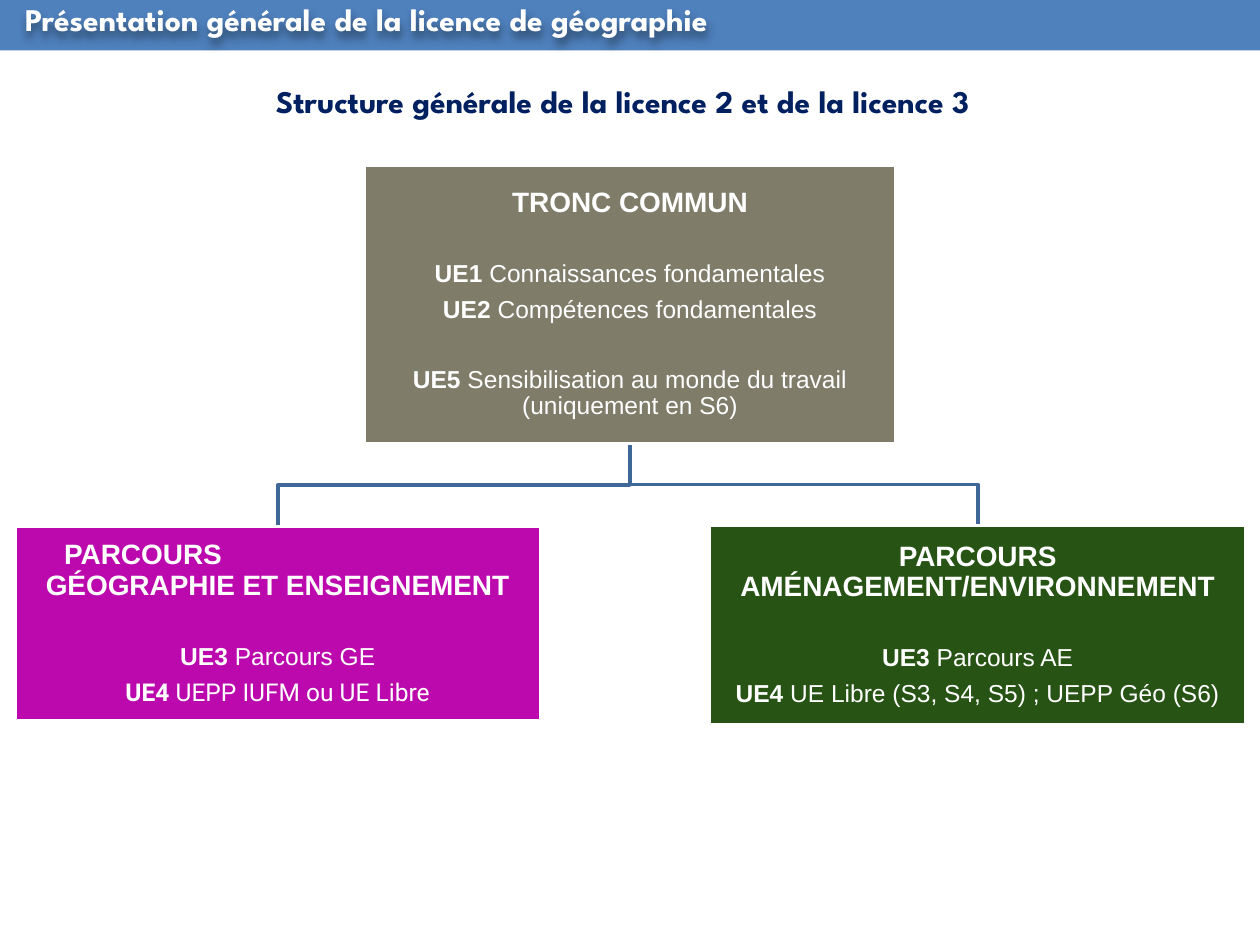
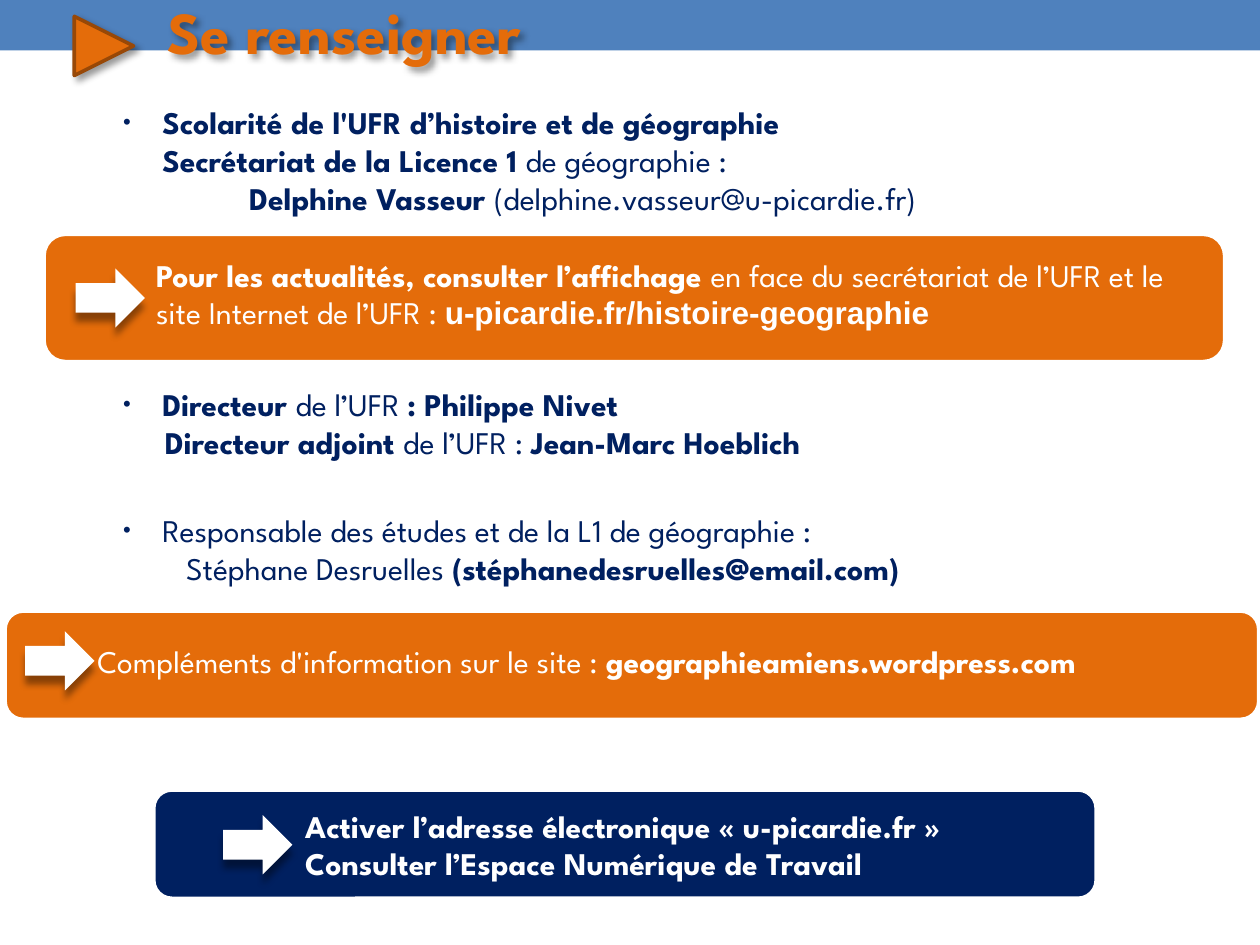
from lxml.etree import SubElement as Sub
from pptx import Presentation
from pptx.dml.color import RGBColor as Rgb
from pptx.enum.shapes import MSO_SHAPE as Kind
from pptx.enum.text import MSO_ANCHOR as Anchor, MSO_AUTO_SIZE as Auto, PP_ALIGN as Align
from pptx.oxml.ns import qn
from pptx.util import Inches, Pt

HUE = {
    "band": "4F81BD", "navy": "002060", "white": "FFFFFF", "orange": "E46C0A",
    "rust": "984807", "wire": "3F6797", "olive": "4A452A", "pink": "BB09AE",
    "green": "275315", "black": "000000",
}
HEAD = "League Spartan"
COLS, ROWS = 100, 75
WIDE, HIGH = Inches(10), Inches(7.5)
EDGE = 2.08
NAVY = {"name": HEAD, "size": Pt(18), "hue": "navy"}
PALE = {**NAVY, "hue": "white"}
CARD = {"name": "Arial", "size": Pt(14), "hue": "white"}
TOP = {"size": Pt(16)}
BULLET = {"left": 0.31, "hang": -0.31, "bullet": True}


def apply(item, looks):
    """Set each attribute of an item from a dict."""
    for key, value in looks.items():
        setattr(item, key, value)


def grid(col, row, cols, rows):
    """Turn grid columns and rows into slide lengths."""
    return (int(col * WIDE / COLS), int(row * HIGH / ROWS),
            int(cols * WIDE / COLS), int(rows * HIGH / ROWS))


def within(box, col, row, cols, rows):
    """Shift a part by the corner of its box."""
    return box[0] + col, box[1] + row, cols, rows


def paint(shape, fill=None, line=None):
    """Give a shape its flat fill and line."""
    shape.shadow.inherit = False
    if fill:
        shape.fill.solid()
        shape.fill.fore_color.rgb = Rgb.from_string(HUE[fill])
    else:
        shape.fill.background()
    if line:
        shape.line.color.rgb = Rgb.from_string(HUE[line])
        shape.line.width = Pt(EDGE)
    else:
        shape.line.fill.background()


def draw(slide, kind, box, fill, line=None):
    """Add a painted preset shape."""
    shape = slide.shapes.add_shape(kind, *grid(*box))
    paint(shape, fill, line)
    return shape


def shade(shape, far, turn):
    """Cast a soft shadow."""
    shape.shadow.inherit = False
    list_ = shape.element.spPr.find(qn("a:effectLst"))
    cast = Sub(list_, qn("a:outerShdw"), blurRad=str(Pt(4)), dist=str(Pt(far)),
               dir=str(turn * 60000), rotWithShape="0")
    tint = Sub(cast, qn("a:srgbClr"), val=HUE["black"])
    Sub(tint, qn("a:alpha"), val="40000")


def indent(para, left=0, hang=0, bullet=False):
    """Set the margin and bullet of a paragraph."""
    props = para._p.get_or_add_pPr()
    props.set("marL", str(Inches(left)))
    props.set("indent", str(Inches(hang)))
    if bullet:
        Sub(props, qn("a:buSzPct"), val="70000")
        Sub(props, qn("a:buFont"), typeface="Arial")
        Sub(props, qn("a:buChar"), char="•")


def write(frame, lines, look, shape=None):
    """Fill a frame with lines whose parts are bold and plain in turn."""
    for num, (parts, own) in enumerate(lines):
        para = frame.add_paragraph() if num else frame.paragraphs[0]
        own = {**look, **own}
        indent(para, **own.get("indent", {}))
        apply(para, {**(shape or {}), **own.get("para", {})})
        for spot, text in enumerate(parts):
            if not text:
                continue
            run = para.add_run()
            run.text = text
            name = own.get("fonts", {}).get(spot, own["name"])
            apply(run.font, {"name": name, "size": own["size"], "bold": spot % 2 == 0})
            run.font.color.rgb = Rgb.from_string(HUE[own["hue"]])


def note(slide, box, lines, look, wrap=True):
    """Add a plain text box."""
    frame = slide.shapes.add_textbox(*grid(*box)).text_frame
    frame.word_wrap = wrap
    write(frame, lines, look)


def title(slide, box, text, look, left, turn):
    """Place and format the title placeholder."""
    head = slide.shapes.title
    apply(head, dict(zip(("left", "top", "width", "height"), grid(*box))))
    apply(head.text_frame, {"vertical_anchor": Anchor.MIDDLE, "word_wrap": True,
                            "auto_size": Auto.NONE})
    write(head.text_frame, [((text,), {"indent": {"left": left}})], look,
          {"alignment": Align.LEFT})
    shade(head, 3, turn)


def band(slide):
    """Draw the top band once, on the shared layout."""
    bar = draw(slide, Kind.RECTANGLE, (0, 0, COLS, 4), "band")
    bar.element.nvSpPr.cNvPr.set("id", "99")
    slide.slide_layout.shapes.element.insert(2, bar.element)


def card(slide, box, fill, lines):
    """Add a filled block of course units."""
    block = draw(slide, Kind.RECTANGLE, box, fill, "white")
    frame = block.text_frame
    pads = ("margin_left", "margin_right", "margin_top", "margin_bottom")
    apply(frame, {**dict.fromkeys(pads, Inches(0.01)), "word_wrap": True,
                  "vertical_anchor": Anchor.MIDDLE})
    write(frame, lines, CARD, {"alignment": Align.CENTER, "line_spacing": 0.9})
    return block


def branch(slide, trunk, leaf):
    """Link the foot of one box to the head of another."""
    x, y = trunk[0] + trunk[2] / 2, trunk[1] + trunk[3]
    end, low = leaf[0] + leaf[2] / 2, leaf[1]
    mid = (y + low) / 2
    spots = [grid(*spot, 0, 0)[:2] for spot in ((x, y), (x, mid), (end, mid), (end, low))]
    path_ = slide.shapes.build_freeform(*spots[0], scale=1.0)
    path_.add_line_segments(spots[1:], close=False)
    paint(path_.convert_to_shape(), line="wire")


def tree(slide, box):
    """Lay out the common core and its two branches."""
    core = within(box, 27.7, 0, 42.2, 22.1)
    teach = within(box, 0, 28.7, 41.7, 15.4)
    plan = within(box, 55.1, 28.6, 42.6, 15.8)
    for leaf in (plan, teach):
        branch(slide, core, leaf)
    near, far = ({"para": {"space_before": Pt(gap)}} for gap in (5.5, 24.5))
    block = card(slide, core, "olive", [
        (("TRONC COMMUN",), TOP),
        (("UE1", " Connaissances fondamentales"), far),
        (("UE2", " Compétences fondamentales"), near),
        (("UE5", " Sensibilisation au monde du travail (uniquement en S6)"), far),
    ])
    tint = block.element.spPr.find(qn("a:solidFill"))[0]
    Sub(tint, qn("a:alpha"), val="70000")
    card(slide, teach, "pink", [
        (("PARCOURS",), {**TOP, "indent": {"left": 0.38}, "para": {"alignment": Align.LEFT}}),
        (("GÉOGRAPHIE ET ENSEIGNEMENT",), TOP),
        (("UE3 ", "Parcours GE"), far),
        (("UE4 ", "UEPP IUFM ou UE Libre"), {**near, "name": "Roboto"}),
    ])
    card(slide, plan, "green", [
        (("PARCOURS AMÉNAGEMENT/ENVIRONNEMENT",), TOP),
        (("UE3 ", "Parcours AE"), far),
        (("UE4 ", "UE Libre (S3, S4, S5) ; UEPP Géo (S6)"), near),
    ])


def banner(slide, box, fill, pad, arrow, lines):
    """Add a rounded banner with its arrow."""
    block = draw(slide, Kind.ROUNDED_RECTANGLE, box, fill, "white")
    left, top = pad
    apply(block.text_frame, {
        "margin_left": Inches(left), "margin_top": Inches(top), "margin_right": Inches(0.11),
        "word_wrap": True, "vertical_anchor": Anchor.TOP,
    })
    write(block.text_frame, lines, PALE, {"alignment": Align.LEFT})
    mark = draw(slide, Kind.RIGHT_ARROW, within(box, *arrow, 5.5, 4.7), "white")
    shade(mark, 5, 90)


def degree(slide):
    """Build the slide on the degree structure."""
    title(slide, (0, -1.1, 91.7, 5.2), "Présentation générale de la licence de géographie",
          PALE, 0.1, 90)
    note(slide, (20.9, 6, 65.5, 4),
         [(("Structure générale de la licence 2 et de la licence 3",), {})], NAVY, False)
    tree(slide, (1.2, 13.1, 97.7, 44.4))


def contact(slide):
    """Build the slide of contacts."""
    title(slide, (3.5, -2.7, 91.7, 10.3), "Se renseigner",
          {**NAVY, "size": Pt(34), "hue": "orange"}, 0.88, 45)
    mark = draw(slide, Kind.ISOSCELES_TRIANGLE, (5.9, 1.3, 4.7, 4.7), "orange", "rust")
    mark.rotation = 90
    shade(mark, 3, 45)

    notes = {
        7.7: [
            (("Scolarité de l'UFR d’histoire et de géographie",), {"indent": BULLET}),
            (("Secrétariat de la Licence 1 ", "de géographie :"), {"indent": {"left": 0.31}}),
            (("Delphine Vasseur ", "(delphine.vasseur@u-picardie.fr)"),
             {"indent": {"left": 1}}),
        ],
        30.1: [
            (("Directeur ", "de l’UFR ", ": Philippe Nivet"), {"indent": BULLET}),
            (("Directeur adjoint ", "de l’UFR : ", "Jean-Marc Hoeblich"),
             {"indent": {"left": 0.33}}),
        ],
        40.1: [
            (("", "Responsable des études et de la L1 de géographie :"), {"indent": BULLET}),
            (("", "Stéphane Desruelles ", "(stéphanedesruelles@email.com)"),
             {"indent": {"left": 0.5}}),
        ],
    }
    for row, lines in notes.items():
        note(slide, (8.8, row, 89.4, 3 * len(lines) + 1), lines, NAVY)

    banner(slide, (3.5, 18.6, 93.7, 10.1), "orange", (0.84, 0.12), (2.5, 2.7), [
        (("Pour les actualités, consulter l’affichage ",
          "en face du secrétariat de l’UFR et le site Internet de l’UFR : ",
          "u-picardie.fr/histoire-geographie"), {"fonts": {2: "Arial"}}),
    ])
    banner(slide, (0.4, 48.5, 99.5, 8.6), "orange", (0.69, 0.2), (1.6, 1.6), [
        (("", "Compléments d'information sur le site : ", "geographieamiens.wordpress.com"), {}),
    ])
    banner(slide, (12.2, 62.7, 74.8, 8.6), "navy", (1.16, 0.09), (5.5, 2), [
        (("Activer l’adresse électronique « u-picardie.fr »",), {}),
        (("Consulter l’Espace Numérique de Travail",), {}),
    ])


def main():
    """Build and save the deck."""
    deck = Presentation()
    apply(deck, {"slide_width": WIDE, "slide_height": HIGH})
    layout = deck.slide_layouts[5]
    first, second = (deck.slides.add_slide(layout) for _ in range(2))
    band(first)
    degree(first)
    contact(second)
    deck.save("out.pptx")


if __name__ == "__main__":
    main()
